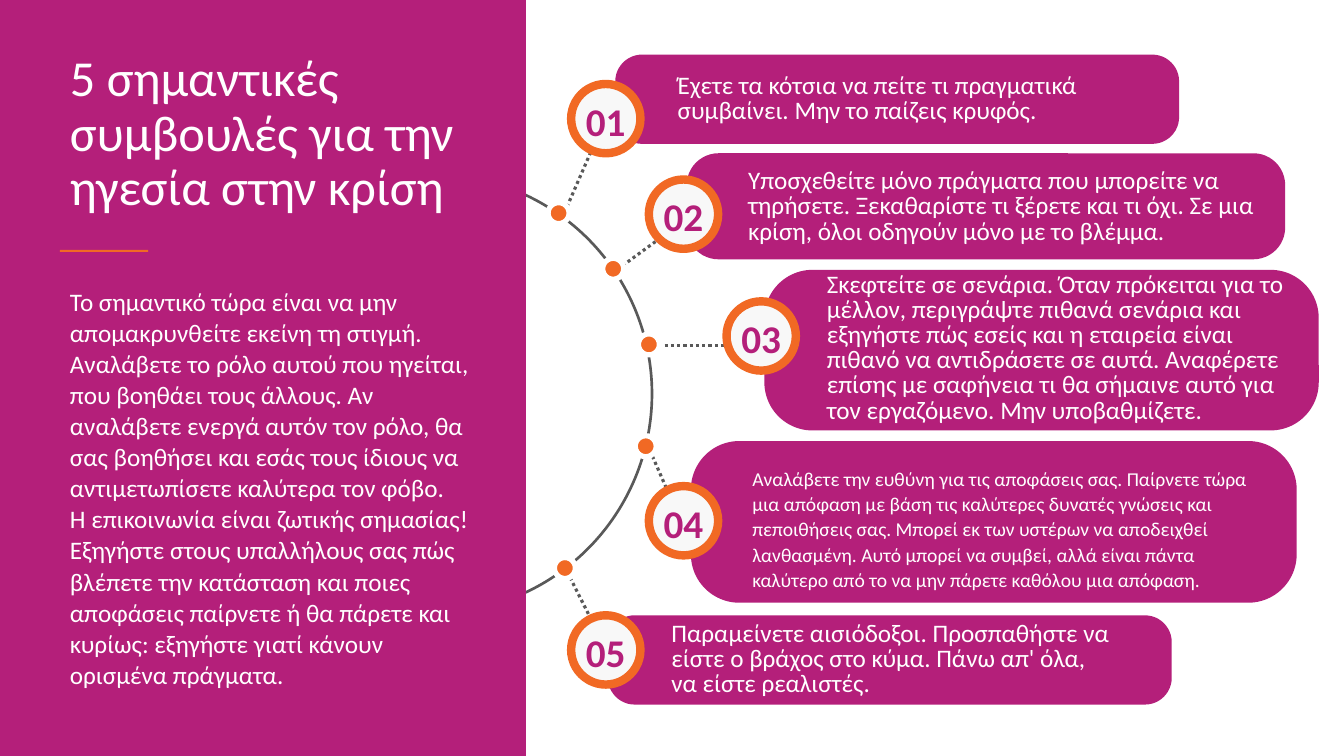
from lxml.etree import SubElement
from pptx import Presentation
from pptx.dml.color import RGBColor
from pptx.enum.dml import MSO_LINE
from pptx.enum.shapes import MSO_CONNECTOR, MSO_SHAPE
from pptx.enum.text import MSO_ANCHOR, MSO_AUTO_SIZE, PP_ALIGN
from pptx.oxml.ns import qn
from pptx.util import Pt

PX = 9525  # EMU per px, 96 px to the inch


class Theme:
    font = "Calibri"
    magenta = RGBColor(0xB4, 0x1F, 0x7A)
    orange = RGBColor(0xF1, 0x69, 0x24)
    grey = RGBColor(0x59, 0x59, 0x59)
    pale = RGBColor(0xF8, 0xF8, 0xF8)
    white = RGBColor(0xFF, 0xFF, 0xFF)
    title_size = Pt(36)
    number_size = Pt(28)
    text_size = Pt(18)
    small_size = Pt(14)


def add_shape(kind, box, fill, line=None, line_width=Pt(0)):
    shape = slide.shapes.add_shape(kind, *[n * PX for n in box])
    shape.shadow.inherit = False
    if fill is None:
        shape.fill.background()
    else:
        shape.fill.solid()
        shape.fill.fore_color.rgb = fill
    if line is None:
        shape.line.fill.background()
    else:
        shape.line.color.rgb = line
        shape.line.width = line_width
    return shape


def write_text(shape, text, size, color=Theme.white, spacing=None, bold=False,
               align=PP_ALIGN.LEFT, anchor=MSO_ANCHOR.TOP):
    frame = shape.text_frame
    frame.text = text
    frame.word_wrap = True
    frame.auto_size = MSO_AUTO_SIZE.NONE
    frame.vertical_anchor = anchor
    for paragraph in frame.paragraphs:
        paragraph.alignment = align
        paragraph.space_before = Pt(0)
        paragraph.line_spacing = spacing
        for run in paragraph.runs:
            run.font.name = Theme.font
            run.font.size = size
            run.font.bold = bold
            run.font.color.rgb = color


presentation = Presentation()
presentation.slide_width = 1280 * PX
presentation.slide_height = 720 * PX
slide = presentation.slides.add_slide(presentation.slide_layouts[1])

# Tips: text, size, pill box, text box, badge corner, dot centre, dotted line
tips = [
    ("Έχετε τα κότσια να πείτε τι πραγματικά συμβαίνει. Μην το παίζεις κρυφός.",
     Theme.text_size, (586, 52, 537, 85), (636, 65, 438, 59),
     (540, 76), (532, 203), (540, 197, 570, 128)),
    ("Υποσχεθείτε μόνο πράγματα που μπορείτε να τηρήσετε. Ξεκαθαρίστε τι ξέρετε "
     "και τι όχι. Σε μια κρίση, όλοι οδηγούν μόνο με το βλέμμα.",
     Theme.text_size, (654, 146, 570, 101), (703, 156, 503, 83),
     (614, 167), (584, 256), (593, 253, 660, 204)),
    ("Σκεφτείτε σε σενάρια. Όταν πρόκειται για το μέλλον, περιγράψτε πιθανά "
     "σενάρια και εξηγήστε πώς εσείς και η εταιρεία είναι πιθανό να αντιδράσετε "
     "σε αυτά. Αναφέρετε επίσης με σαφήνεια τι θα σήμαινε αυτό για τον "
     "εργαζόμενο. Μην υποβαθμίζετε.",
     Theme.text_size, (728, 257, 528, 153), (778, 266, 478, 132),
     (688, 283), (618, 328), (627, 329, 701, 329)),
    ("Αναλάβετε την ευθύνη για τις αποφάσεις σας. Παίρνετε τώρα μια απόφαση με "
     "βάση τις καλύτερες δυνατές γνώσεις και πεποιθήσεις σας. Μπορεί εκ των "
     "υστέρων να αποδειχθεί λανθασμένη. Αυτό μπορεί να συμβεί, αλλά είναι πάντα "
     "καλύτερο από το να μην πάρετε καθόλου μια απόφαση.",
     Theme.small_size, (658, 420, 577, 154), (707, 437, 504, 132),
     (614, 459), (615, 425), (619, 429, 646, 491)),
    ("Παραμείνετε αισιόδοξοι. Προσπαθήστε να είστε ο βράχος στο κύμα. "
     "Πάνω απ' όλα, να είστε ρεαλιστές.",
     Theme.text_size, (579, 586, 537, 85), (630, 599, 438, 59),
     (540, 582), (538, 541), (543, 550, 576, 616)),
]

# Half circle, partly behind the panel
arc = add_shape(MSO_SHAPE.ARC, (203, 166, 418, 418), None, Theme.grey, Pt(1.91))
arc.adjustments[0] = 162  # from the top
arc.adjustments[1] = 54  # to the bottom

for number, (text, size, pill_box, text_box, badge, dot, ends) in enumerate(tips, 1):
    # Dotted link from the arc to the badge
    link = slide.shapes.add_connector(MSO_CONNECTOR.STRAIGHT, *[n * PX for n in ends])
    link.line.color.rgb = Theme.grey
    link.line.width = Pt(2.25)
    link.line.dash_style = MSO_LINE.ROUND_DOT
    SubElement(link._element.spPr, qn("a:effectLst"))

    # Dot on the arc
    add_shape(MSO_SHAPE.OVAL, (dot[0] - 10, dot[1] - 10, 20, 20),
              Theme.orange, Theme.white, Pt(3.75))

    # Pill and its text
    pill = add_shape(MSO_SHAPE.ROUNDED_RECTANGLE, pill_box, Theme.magenta)
    pill.adjustments[0] = 0.3
    label = slide.shapes.add_textbox(*[n * PX for n in text_box])
    write_text(label, text, size, spacing=Pt(18), anchor=MSO_ANCHOR.MIDDLE)

    # Numbered badge
    ring = add_shape(MSO_SHAPE.OVAL, (badge[0] + 4, badge[1] + 4, 66, 66),
                     Theme.pale, Theme.orange, Pt(6))
    write_text(ring, f"{number:02d}", Theme.number_size, Theme.magenta, bold=True,
               align=PP_ALIGN.CENTER, anchor=MSO_ANCHOR.MIDDLE)
    frame = ring.text_frame
    frame.word_wrap = False
    frame.margin_left = frame.margin_right = frame.margin_bottom = 0
    frame.margin_top = 4 * PX

# Left panel with accent line
add_shape(MSO_SHAPE.RECTANGLE, (0, 0, 501, 720), Theme.magenta)
add_shape(MSO_SHAPE.RECTANGLE, (57, 238, 84, 2), Theme.orange)

# Title and body, brought in front of the panel
title, body = slide.placeholders
for placeholder, box in ((title, (57, 46, 400, 170)), (body, (57, 267, 400, 400))):
    placeholder.left, placeholder.top, placeholder.width, placeholder.height = [
        n * PX for n in box]
    slide.shapes._spTree.append(placeholder._element)
write_text(title, "5 σημαντικές συμβουλές για την ηγεσία στην κρίση",
           Theme.title_size, spacing=0.9)
write_text(
    body,
    "Το σημαντικό τώρα είναι να μην απομακρυνθείτε εκείνη τη στιγμή. Αναλάβετε το "
    "ρόλο αυτού που ηγείται, που βοηθάει τους άλλους. Αν αναλάβετε ενεργά αυτόν τον "
    "ρόλο, θα σας βοηθήσει και εσάς τους ίδιους να αντιμετωπίσετε καλύτερα τον φόβο.\n"
    "Η επικοινωνία είναι ζωτικής σημασίας! Εξηγήστε στους υπαλλήλους σας πώς βλέπετε "
    "την κατάσταση και ποιες αποφάσεις παίρνετε ή θα πάρετε και κυρίως: εξηγήστε "
    "γιατί κάνουν ορισμένα πράγματα.",
    Theme.text_size, spacing=Pt(22.2))
for paragraph in body.text_frame.paragraphs:
    properties = paragraph._p.get_or_add_pPr()
    properties.set("marL", "0")
    properties.set("indent", "0")
    SubElement(properties, qn("a:buNone"))

presentation.save("out.pptx")
